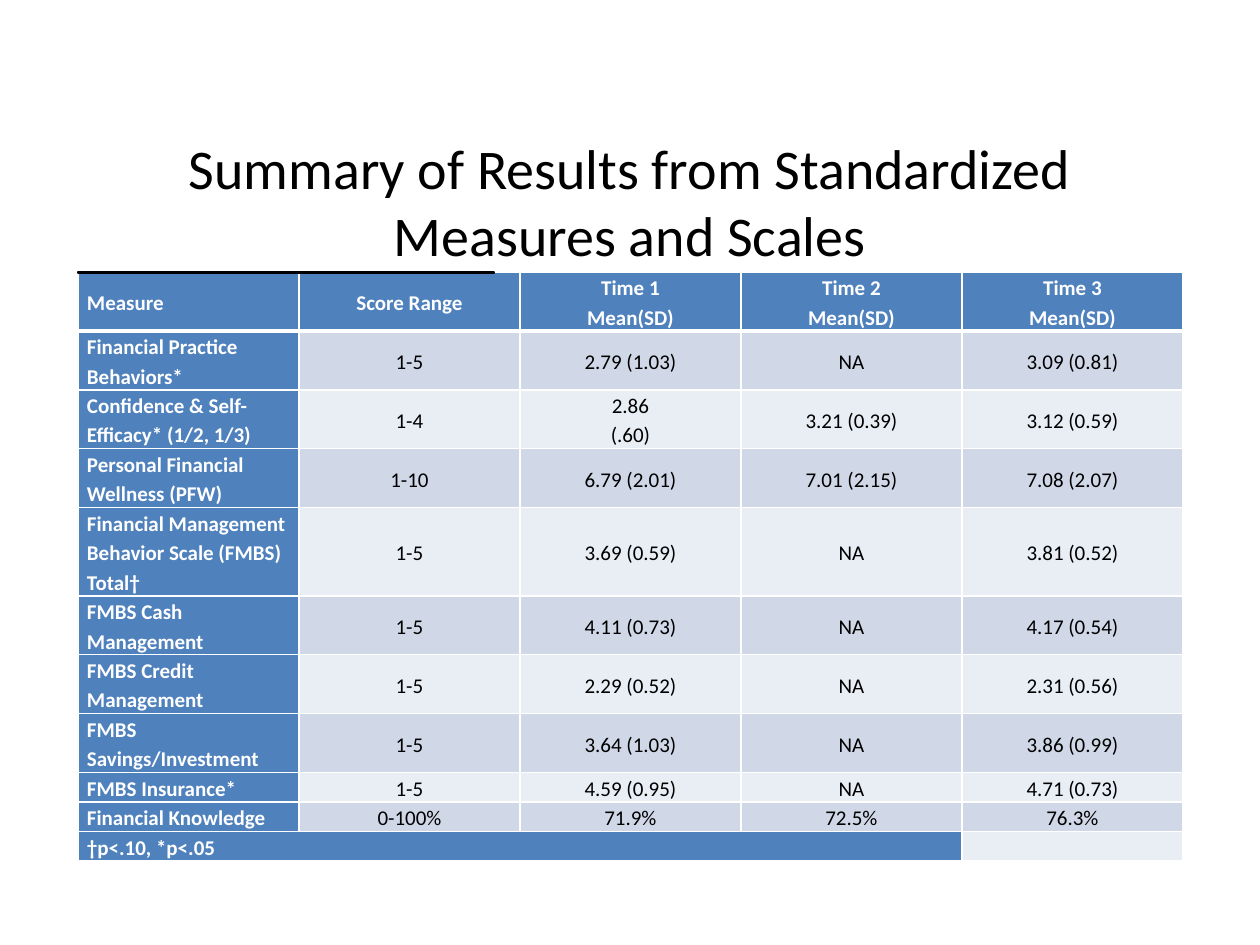
from lxml import etree
from pptx import Presentation
from pptx import util as u
from pptx.dml.color import RGBColor
from pptx.enum import shapes, text
from pptx.oxml import ns

FONT = "Calibri"
BLACK = RGBColor(0x00, 0x00, 0x00)
WHITE = RGBColor(0xFF, 0xFF, 0xFF)
BLUE = RGBColor(0x4F, 0x81, 0xBD)
BANDS = (RGBColor(0xD0, 0xD8, 0xE8), RGBColor(0xE9, 0xED, 0xF4))

HEADER = ["Measure", "Score Range", "Time 1\nMean(SD)", "Time 2\nMean(SD)", "Time 3\nMean(SD)"]
RESULTS = [
    ["Financial Practice Behaviors*", "1-5", "2.79 (1.03)", "NA", "3.09 (0.81)"],
    ["Confidence & Self-Efficacy* (1/2, 1/3)", "1-4", "2.86\n(.60)", "3.21 (0.39)", "3.12 (0.59)"],
    ["Personal Financial Wellness (PFW)", "1-10", "6.79 (2.01)", "7.01 (2.15)", "7.08 (2.07)"],
    ["Financial Management Behavior Scale (FMBS) Total†", "1-5", "3.69 (0.59)", "NA", "3.81 (0.52)"],
    ["FMBS Cash Management", "1-5", "4.11 (0.73)", "NA", "4.17 (0.54)"],
    ["FMBS Credit Management", "1-5", "2.29 (0.52)", "NA", "2.31 (0.56)"],
    ["FMBS Savings/Investment", "1-5", "3.64 (1.03)", "NA", "3.86 (0.99)"],
    ["FMBS Insurance*", "1-5", "4.59 (0.95)", "NA", "4.71 (0.73)"],
    ["Financial Knowledge", "0-100%", "71.9%", "72.5%", "76.3%"],
]
FOOTNOTE = ["†p<.10, *p<.05", "", "", "", ""]
ROW_LINES = [2, 2, 2, 2, 3, 2, 2, 2, 1, 1, 1]
LINE_HEIGHT = 28
COLUMN_WIDTH = 221


def px(n):
    return u.Emu(round(n * 914400 / 126))


def set_all(target, values):
    for name, value in values.items():
        setattr(target, name, value)


def style_font(font, size, color, bold=False):
    set_all(font, {"name": FONT, "size": u.Pt(size), "bold": bold})
    font.color.rgb = color


def add_title(s, words):
    title = s.shapes.title
    set_all(title, {"left": px(63), "top": px(122), "width": px(1134), "height": px(158)})
    tf = title.text_frame
    set_all(tf, {"text": words, "word_wrap": True, "auto_size": text.MSO_AUTO_SIZE.NONE,
                 "vertical_anchor": text.MSO_ANCHOR.MIDDLE})
    p = tf.paragraphs[0]
    p.alignment = text.PP_ALIGN.CENTER
    style_font(p.runs[0].font, 32, BLACK)


def add_borders(cell, bottom):
    tc_pr = cell._tc.get_or_add_tcPr()
    for side, points in (("L", 1), ("R", 1), ("T", 1), ("B", bottom)):
        line = etree.SubElement(tc_pr, ns.qn(f"a:ln{side}"), w=str(u.Pt(points)))
        fill = etree.SubElement(line, ns.qn("a:solidFill"))
        etree.SubElement(fill, ns.qn("a:srgbClr"), val=str(WHITE))


def fill_cell(cell, words, color, heading, centered, bottom=1):
    set_all(cell, {"margin_left": px(9), "margin_right": px(9), "margin_top": 0,
                   "margin_bottom": 0, "vertical_anchor": text.MSO_ANCHOR.MIDDLE})
    add_borders(cell, bottom)
    cell.fill.solid()
    cell.fill.fore_color.rgb = color
    cell.text_frame.text = words
    for p in cell.text_frame.paragraphs:
        p.alignment = text.PP_ALIGN.CENTER if centered else text.PP_ALIGN.LEFT
        p.line_spacing = 1.15
        for r in p.runs:
            style_font(r.font, 12, WHITE if heading else BLACK, heading)
        if not p.runs:  # keeps an empty cell from stretching its row
            etree.SubElement(p._p, ns.qn("a:endParaRPr"), sz="1200")


def add_results_table(s):
    rows = [HEADER, *RESULTS, FOOTNOTE]
    frame = s.shapes.add_table(len(rows), len(HEADER), px(78), px(272),
                               px(COLUMN_WIDTH * len(HEADER)), px(LINE_HEIGHT * sum(ROW_LINES)))
    table = frame.table
    set_all(table, {"first_row": False, "horz_banding": False})
    for column in table.columns:
        column.width = px(COLUMN_WIDTH)
    for i, (row, lines) in enumerate(zip(rows, ROW_LINES)):
        table.rows[i].height = px(LINE_HEIGHT * lines)
        for j, words in enumerate(row):
            heading = i == 0 or j == 0
            color = BLUE if heading else BANDS[(i - 1) % 2]
            fill_cell(table.cell(i, j), words, color, heading, j > 0, 3 if i == 0 else 1)
    # The footnote spans all but the last column
    last = len(rows) - 1
    table.cell(last, 0).merge(table.cell(last, len(HEADER) - 2))


def add_rule(s):
    rule = s.shapes.add_shape(shapes.MSO_SHAPE.RECTANGLE, px(78), px(272), px(416), px(1))
    rule.shadow.inherit = False
    rule.fill.solid()
    rule.fill.fore_color.rgb = BLACK
    rule.line.color.rgb = BLACK
    rule.line.width = u.Pt(0.75)


def main():
    prs = Presentation()
    set_all(prs, {"slide_width": px(1260), "slide_height": px(945)})
    s = prs.slides.add_slide(prs.slide_layouts[5])
    add_title(s, "Summary of Results from Standardized Measures and Scales")
    add_results_table(s)
    add_rule(s)
    prs.save("out.pptx")


if __name__ == "__main__":
    main()
